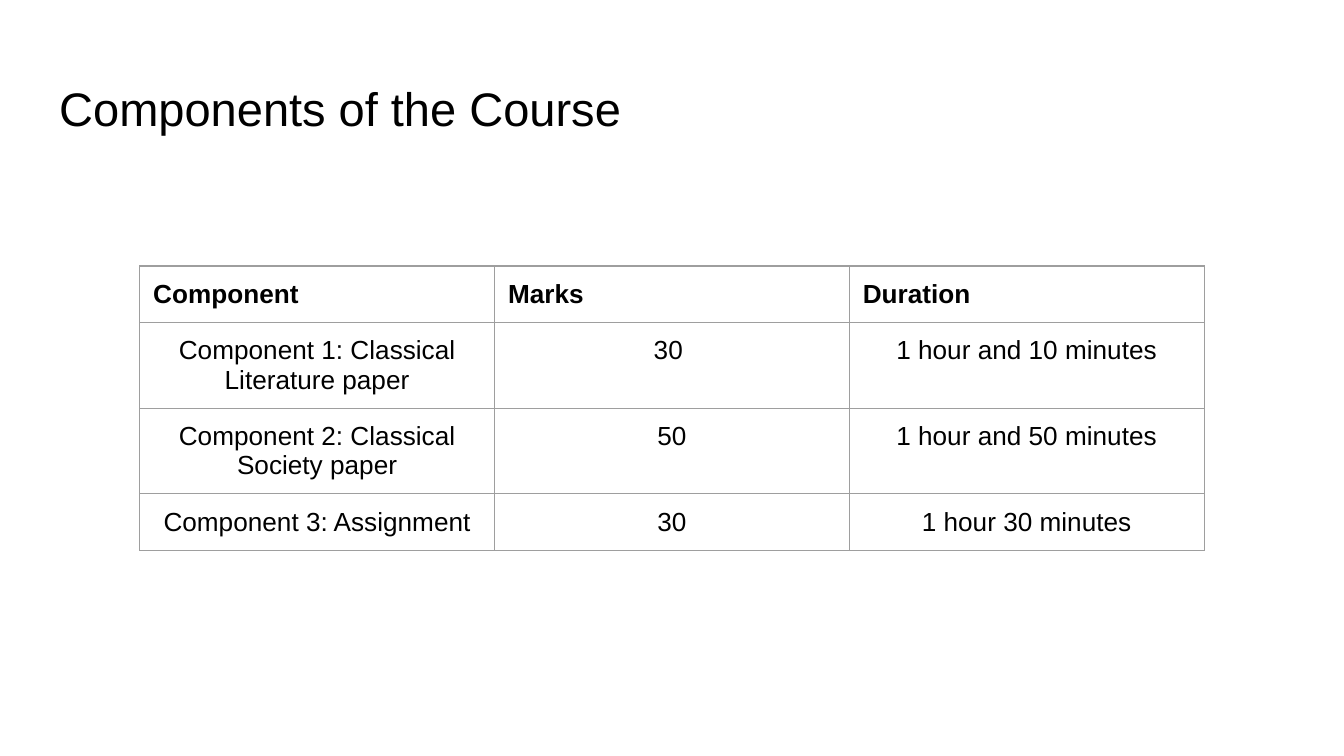
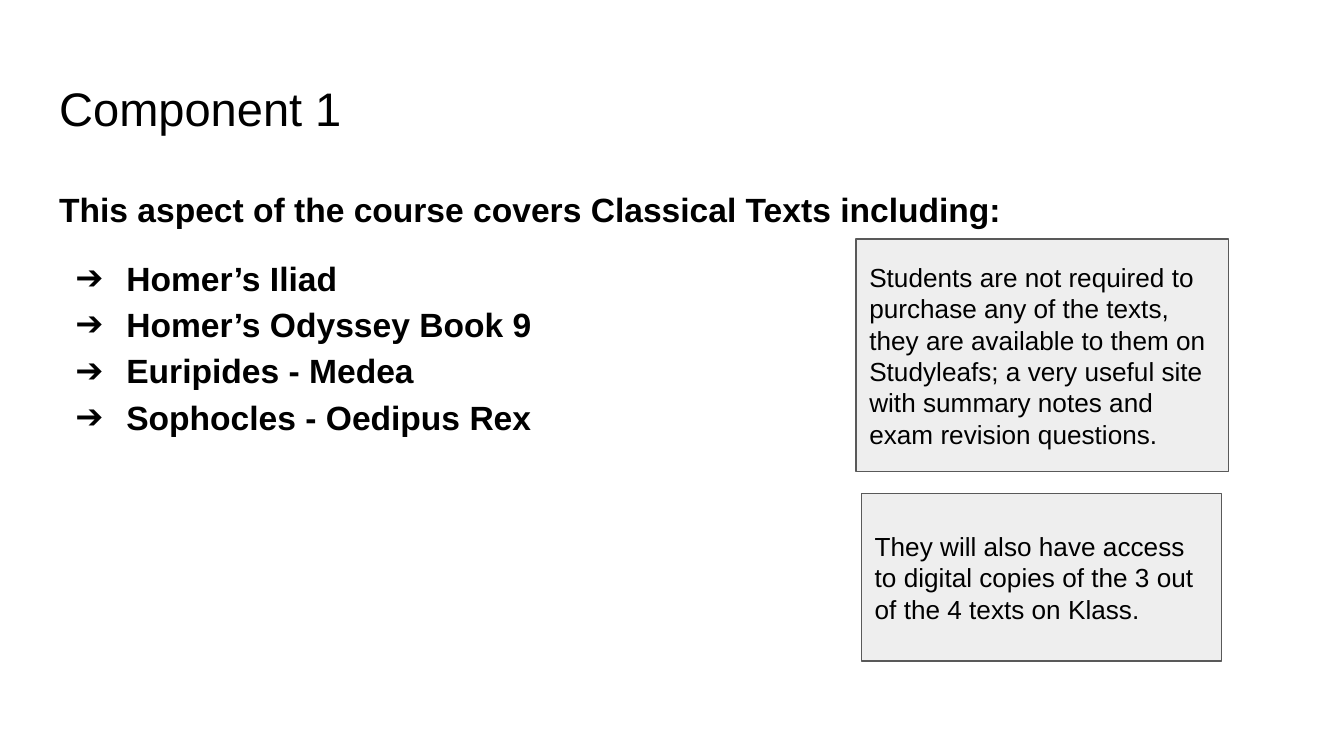
from dataclasses import dataclass

from lxml import etree
from pptx import Presentation
from pptx.dml.color import RGBColor
from pptx.enum.shapes import MSO_SHAPE
from pptx.enum.text import MSO_ANCHOR, MSO_AUTO_SIZE, PP_ALIGN
from pptx.oxml.ns import qn
from pptx.util import Inches, Pt

RECTANGLE = MSO_SHAPE.RECTANGLE
TOP, MIDDLE = MSO_ANCHOR.TOP, MSO_ANCHOR.MIDDLE
LEFT, CENTER = PP_ALIGN.LEFT, PP_ALIGN.CENTER
NO_AUTOFIT = MSO_AUTO_SIZE.NONE

# Shared look
PAGE_WIDTH = Inches(10)
PAGE_HEIGHT = PAGE_WIDTH * 9 // 16
FONT = "Arial"
BLACK, NOTE_FILL, NOTE_LINE, GRID = "000000", "EEEEEE", "595959", "9E9E9E"
TITLE_SIZE, BODY_SIZE, SMALL_SIZE = 25.2, 18, 14
LINE_WIDTH = Pt(0.75)
INSET = Inches(0.1)
TITLE_ONLY, TITLE_AND_BODY = 5, 1


@dataclass(frozen=True)
class Area:
    left: float
    top: float
    width: float
    height: float

    def lengths(self) -> list:
        return [Inches(n) for n in (self.left, self.top, self.width, self.height)]


@dataclass(frozen=True)
class Note:
    area: Area
    text: str


TITLE_AREA = Area(0.34, 0.49, 9.32, 0.63)
BODY_AREA = Area(0.34, 1.26, 9.32, 3.74)
TABLE_AREA = Area(1.04, 1.98, 7.92, 1.68)

COURSE_ROWS = [
    ("Component", "Marks", "Duration"),
    ("Component 1: Classical Literature paper", "30 ", "1 hour and 10 minutes"),
    ("Component 2: Classical Society paper", "50", "1 hour and 50 minutes"),
    ("Component 3: Assignment", "30", "1 hour 30 minutes"),
]
TEXTS_INTRO = "This aspect of the course covers Classical Texts including:"
CLASSICAL_TEXTS = [
    "Homer’s Iliad",
    "Homer’s Odyssey Book 9",
    "Euripides - Medea",
    "Sophocles - Oedipus Rex",
]
NOTES = [
    Note(Area(6.37, 1.78, 2.77, 1.73),
         "Students are not required to purchase any of the texts, they are "
         "available to them on Studyleafs; a very useful site with summary "
         "notes and exam revision questions."),
    Note(Area(6.41, 3.67, 2.68, 1.25),
         "They will also have access to digital copies of the 3 out of the "
         "4 texts on Klass."),
]


def colour(value: str) -> RGBColor:
    return RGBColor.from_string(value)


def format_paragraph(para, size: float, bold: bool = False, align=LEFT) -> None:
    para.alignment = align
    for span in para.runs:
        span.font.name = FONT
        span.font.size = Pt(size)
        span.font.bold = bold
        span.font.color.rgb = colour(BLACK)


def set_insets(holder) -> None:
    """Give a text frame or a table cell the shared inner margins."""
    holder.margin_left = holder.margin_right = INSET
    holder.margin_top = holder.margin_bottom = INSET


def place_text(shape, area: Area, text: str, anchor):
    shape.left, shape.top, shape.width, shape.height = area.lengths()
    frame = shape.text_frame
    frame.text = text
    frame.word_wrap = True
    frame.auto_size = NO_AUTOFIT
    frame.vertical_anchor = anchor
    set_insets(frame)
    return frame


def add_titled_page(deck, layout: int, title: str):
    page = deck.slides.add_slide(deck.slide_layouts[layout])
    frame = place_text(page.shapes.title, TITLE_AREA, title, TOP)
    format_paragraph(frame.paragraphs[0], TITLE_SIZE)
    return page


def set_bullet(para, char: str = "") -> None:
    """Hang the paragraph on an arrow bullet, or clear its bullet."""
    props = para._p.get_or_add_pPr()
    props.set("marL", str(Inches(0.5) if char else 0))
    props.set("indent", str(Inches(-0.38) if char else 0))
    if not char:
        etree.SubElement(props, qn("a:buNone"))
        return
    tint = etree.SubElement(props, qn("a:buClr"))
    etree.SubElement(tint, qn("a:srgbClr"), val=BLACK)
    etree.SubElement(props, qn("a:buFont"), typeface=FONT)
    etree.SubElement(props, qn("a:buChar"), char=char)


def set_borders(cell) -> None:
    props = cell._tc.get_or_add_tcPr()
    for side in ("lnL", "lnR", "lnT", "lnB"):
        line = etree.SubElement(props, qn(f"a:{side}"), w=str(LINE_WIDTH))
        fill = etree.SubElement(line, qn("a:solidFill"))
        etree.SubElement(fill, qn("a:srgbClr"), val=GRID)


def add_grid(page, rows: list, area: Area) -> None:
    table = page.shapes.add_table(len(rows), len(rows[0]), *area.lengths()).table
    table.first_row = table.horz_banding = False
    for r, row in enumerate(rows):
        for c, text in enumerate(row):
            cell = table.cell(r, c)
            cell.text_frame.text = text
            set_insets(cell)
            set_borders(cell)
            cell.fill.background()
            header = r == 0
            format_paragraph(cell.text_frame.paragraphs[0], SMALL_SIZE,
                             header, LEFT if header else CENTER)


def add_list(page, intro: str, items: list) -> None:
    text = "\n".join([intro, *items])
    frame = place_text(page.placeholders[1], BODY_AREA, text, TOP)
    for i, para in enumerate(frame.paragraphs):
        format_paragraph(para, BODY_SIZE, bold=True)
        para.line_spacing = 1.15
        para.space_before = Pt(12 if i == 1 else 0)
        para.space_after = Pt(0)
        set_bullet(para, "➔" if i else "")


def add_note(page, note: Note) -> None:
    box = page.shapes.add_shape(RECTANGLE, *note.area.lengths())
    box.shadow.inherit = False
    box.fill.solid()
    box.fill.fore_color.rgb = colour(NOTE_FILL)
    box.line.color.rgb = colour(NOTE_LINE)
    box.line.width = LINE_WIDTH
    frame = place_text(box, note.area, note.text, MIDDLE)
    format_paragraph(frame.paragraphs[0], SMALL_SIZE)


def main() -> None:
    deck = Presentation()
    deck.slide_width, deck.slide_height = PAGE_WIDTH, PAGE_HEIGHT

    # Course overview
    page = add_titled_page(deck, TITLE_ONLY, "Components of the Course")
    add_grid(page, COURSE_ROWS, TABLE_AREA)

    # First component
    page = add_titled_page(deck, TITLE_AND_BODY, "Component 1")
    add_list(page, TEXTS_INTRO, CLASSICAL_TEXTS)
    for note in NOTES:
        add_note(page, note)

    deck.save("out.pptx")


if __name__ == "__main__":
    main()
